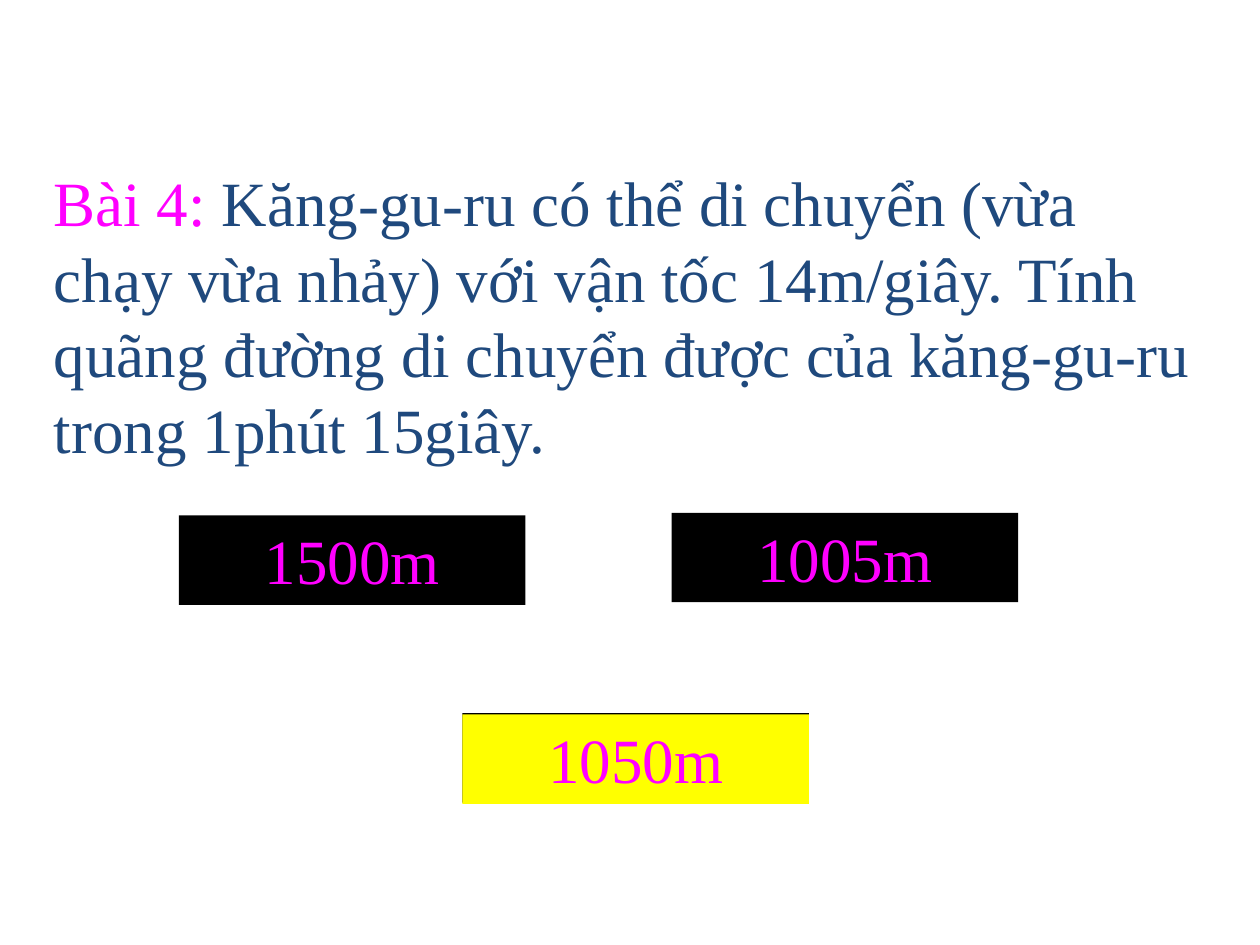
from lxml.etree import SubElement
from pptx import Presentation
from pptx.dml.color import RGBColor
from pptx.enum.shapes import MSO_SHAPE as Shape
from pptx.enum.text import MSO_ANCHOR as Anchor, MSO_AUTO_SIZE as AutoSize, PP_ALIGN as Align
from pptx.oxml.ns import qn
from pptx.util import Inches, Pt

COLORS = {"accent": "FF00FF", "question": "1F497D", "cover": "000000", "correct": "FFFF00"}
FONT, SIZE = "Times New Roman", 36
ANSWER_WIDTH, ANSWER_HEIGHT = 2.75, 0.71
QUESTION = (
    "Kăng-gu-ru có thể di chuyển (vừa chạy vừa nhảy) với vận tốc 14m/giây. "
    "Tính quãng đường di chuyển được của kăng-gu-ru trong 1phút 15giây."
)
ANSWERS = [
    ("1500m", 1.42, 4.09, "cover"),
    ("1005m", 5.33, 4.07, "cover"),
    ("1050m", 3.67, 5.66, "cover"),
    ("1050m", 3.67, 5.67, "correct"),
]


def color(name):
    return RGBColor.from_string(COLORS[name])


def style_span(span, color_name):
    span.font.name = FONT
    span.font.size = Pt(SIZE)
    span.font.color.rgb = color(color_name)


def prepare_frame(box):
    frame = box.text_frame
    frame.word_wrap = True
    frame.auto_size = AutoSize.SHAPE_TO_FIT_TEXT
    frame.vertical_anchor = Anchor.TOP
    return frame


def space_before(para, percent):
    spacing = SubElement(para._p.get_or_add_pPr(), qn("a:spcBef"))
    SubElement(spacing, qn("a:spcPct")).set("val", str(percent * 1000))


def add_question(page, label, wording):
    box = page.shapes.add_textbox(Inches(0.33), Inches(1.25), Inches(9.33), Inches(2.52))
    para = prepare_frame(box).paragraphs[0]
    for text, color_name in ((label, "accent"), (wording, "question")):
        span = para.add_run()
        span.text = text
        style_span(span, color_name)


def add_answer(page, text, left, top, fill):
    box = page.shapes.add_shape(
        Shape.RECTANGLE, Inches(left), Inches(top), Inches(ANSWER_WIDTH), Inches(ANSWER_HEIGHT)
    )
    box.shadow.inherit = False
    box.fill.solid()
    box.fill.fore_color.rgb = color(fill)
    box.line.fill.background()
    para = prepare_frame(box).paragraphs[0]
    para.text = text
    para.alignment = Align.CENTER
    space_before(para, 50)
    style_span(para.runs[0], "accent")


def main():
    deck = Presentation()
    deck.slide_width, deck.slide_height = Inches(10), Inches(7.5)
    page = deck.slides.add_slide(deck.slide_layouts[6])
    add_question(page, "Bài 4: ", QUESTION)
    for answer in ANSWERS:
        add_answer(page, *answer)
    deck.save("out.pptx")


if __name__ == "__main__":
    main()
